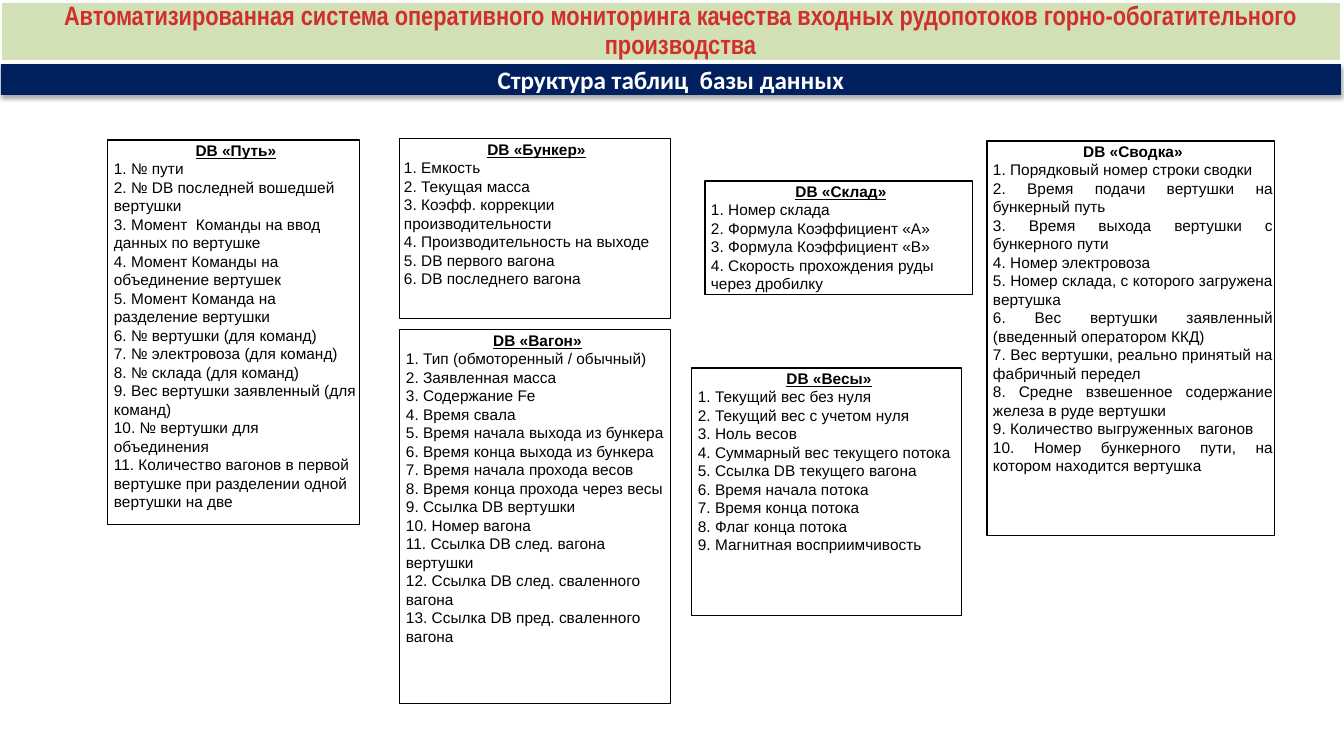
from dataclasses import dataclass

from pptx import Presentation
from pptx import oxml
from pptx import util as u
from pptx.dml.color import RGBColor
from pptx.enum import shapes, text
from pptx.oxml import ns


@dataclass(frozen=True)
class Theme:
    ink: str = "000000"
    paper: str = "FFFFFF"
    heading_fill: str = "D2E1B5"
    heading_ink: str = "D02F2C"
    band_fill: str = "002060"
    heading_font: str = "Arial Narrow"
    band_font: str = "Calibri"
    table_font: str = "Arial"
    heading_size: int = 19
    band_size: int = 18
    table_size: int = 11


def px(length):
    return u.Emu(round(length * 914400 / 100.8))


class SchemaSlide:
    def __init__(self, deck, theme):
        self.theme = theme
        self.slide = deck.slides.add_slide(deck.slide_layouts[5])

    def box(self, left, top, width, height):
        shape = self.slide.shapes.add_shape(
            shapes.MSO_SHAPE.RECTANGLE, px(left), px(top), px(width), px(height))
        shape.shadow.inherit = False
        return shape

    def paint(self, shape, fill, line=None, weight=0.75):
        shape.fill.solid()
        shape.fill.fore_color.rgb = RGBColor.from_string(fill)
        if line:
            shape.line.color.rgb = RGBColor.from_string(line)
            shape.line.width = u.Pt(weight)
        else:
            shape.line.fill.background()

    def frame(self, shape, insets, anchor):
        frame = shape.text_frame
        frame.word_wrap = True
        frame.auto_size = text.MSO_AUTO_SIZE.NONE
        frame.vertical_anchor = anchor
        (frame.margin_left, frame.margin_top,
         frame.margin_right, frame.margin_bottom) = map(px, insets)
        return frame

    def letter(self, paragraph, wording, font, size, color, align, bold=False):
        paragraph.text = wording
        paragraph.alignment = align
        paragraph.font.name = font
        paragraph.font.size = u.Pt(size)
        paragraph.font.bold = bold
        paragraph.font.color.rgb = RGBColor.from_string(color)

    def heading(self, wording, left, top, width, height):
        theme = self.theme
        title = self.slide.shapes.title
        title.left, title.top = px(left), px(top)
        title.width, title.height = px(width), px(height)
        title.element.spPr.append(oxml.parse_xml(
            f'<a:prstGeom {ns.nsdecls("a")} prst="roundRect"><a:avLst>'
            '<a:gd name="adj" fmla="val 24000"/></a:avLst></a:prstGeom>'))
        self.paint(title, theme.heading_fill, theme.paper, 2)
        frame = self.frame(title, (30, 11, 11, 11), text.MSO_ANCHOR.MIDDLE)
        paragraph = frame.paragraphs[0]
        self.letter(paragraph, wording, theme.heading_font, theme.heading_size,
                    theme.heading_ink, text.PP_ALIGN.CENTER, True)
        paragraph.line_spacing = 0.9

    def band(self, wording, *place):
        theme = self.theme
        band = self.box(*place)
        self.paint(band, theme.band_fill)
        effects = band.element.spPr.find(ns.qn("a:effectLst"))
        effects.append(oxml.parse_xml(
            f'<a:outerShdw {ns.nsdecls("a")} blurRad="39370" dist="22860" '
            'dir="5400000" rotWithShape="0"><a:srgbClr val="000000">'
            '<a:alpha val="35000"/></a:srgbClr></a:outerShdw>'))
        frame = self.frame(band, (11, 5, 11, 5), text.MSO_ANCHOR.MIDDLE)
        self.letter(frame.paragraphs[0], wording, theme.band_font, theme.band_size,
                    theme.paper, text.PP_ALIGN.CENTER, True)

    def db_table(self, name, place, fields, inset=6, underline=True,
                 align=text.PP_ALIGN.LEFT):
        theme = self.theme
        table = self.box(*place)
        self.paint(table, theme.paper, theme.ink)
        frame = self.frame(table, (inset, 1, 2, 1), text.MSO_ANCHOR.TOP)
        style = theme.table_font, theme.table_size, theme.ink
        caption = frame.paragraphs[0]
        self.letter(caption, f"DB «{name}»", *style, text.PP_ALIGN.CENTER, True)
        caption.font.underline = underline
        for number, field in enumerate(fields, 1):
            self.letter(frame.add_paragraph(), f"{number}. {field}", *style, align)


def main():
    deck = Presentation()
    deck.slide_width, deck.slide_height = px(1344), px(756)
    schema = SchemaSlide(deck, Theme())

    schema.db_table("Путь", (108, 140, 252, 385), [
        "№ пути",
        "№ DB последней вошедшей вертушки",
        "Момент  Команды на ввод данных по вертушке",
        "Момент Команды на объединение вертушек",
        "Момент Команда на разделение вертушки",
        "№ вертушки (для команд)",
        "№ электровоза (для команд)",
        "№ склада (для команд)",
        "Вес вертушки заявленный (для команд)",
        "№ вертушки для объединения",
        "Количество вагонов в первой вертушке при разделении одной вертушки на две",
    ])
    schema.db_table("Вагон", (400, 330, 271, 374), [
        "Тип (обмоторенный / обычный)",
        "Заявленная масса",
        "Содержание Fe",
        "Время свала",
        "Время начала выхода из бункера",
        "Время конца выхода из бункера",
        "Время начала прохода весов",
        "Время конца прохода через весы",
        "Ссылка DB вертушки",
        "Номер вагона",
        "Ссылка DB след. вагона вертушки",
        "Ссылка DB след. сваленного вагона",
        "Ссылка DB пред. сваленного вагона",
    ])
    schema.db_table("Бункер", (400, 139, 271, 180), [
        "Емкость",
        "Текущая масса",
        "Коэфф. коррекции производительности",
        "Производительность на выходе",
        "DB первого вагона",
        "DB последнего вагона",
    ], inset=4)
    schema.db_table("Весы", (692, 368, 270, 248), [
        "Текущий вес без нуля",
        "Текущий вес с учетом нуля",
        "Ноль весов",
        "Суммарный вес текущего потока",
        "Ссылка DB текущего вагона",
        "Время начала потока",
        "Время конца потока",
        "Флаг конца потока",
        "Магнитная восприимчивость",
    ])
    schema.db_table("Сводка", (987, 141, 288, 395), [
        "Порядковый номер строки сводки",
        "Время подачи вертушки на бункерный путь",
        "Время выхода вертушки с бункерного пути",
        "Номер электровоза",
        "Номер склада, с которого загружена вертушка",
        "Вес вертушки заявленный (введенный оператором ККД)",
        "Вес вертушки, реально принятый на фабричный передел",
        "Средне взвешенное содержание железа в руде вертушки",
        "Количество выгруженных вагонов",
        "Номер бункерного пути, на котором находится вертушка",
    ], underline=False, align=text.PP_ALIGN.JUSTIFY)
    schema.db_table("Склад", (705, 181, 268, 114), [
        "Номер склада",
        "Формула Коэффициент «А»",
        "Формула Коэффициент «B»",
        "Скорость прохождения руды через дробилку",
    ])
    schema.band("Структура таблиц  базы данных", 1, 64, 1340, 31)
    schema.heading("Автоматизированная система оперативного мониторинга качества "
                   "входных рудопотоков горно-обогатительного производства",
                   1, 2, 1340, 59)
    deck.save("out.pptx")


if __name__ == "__main__":
    main()
